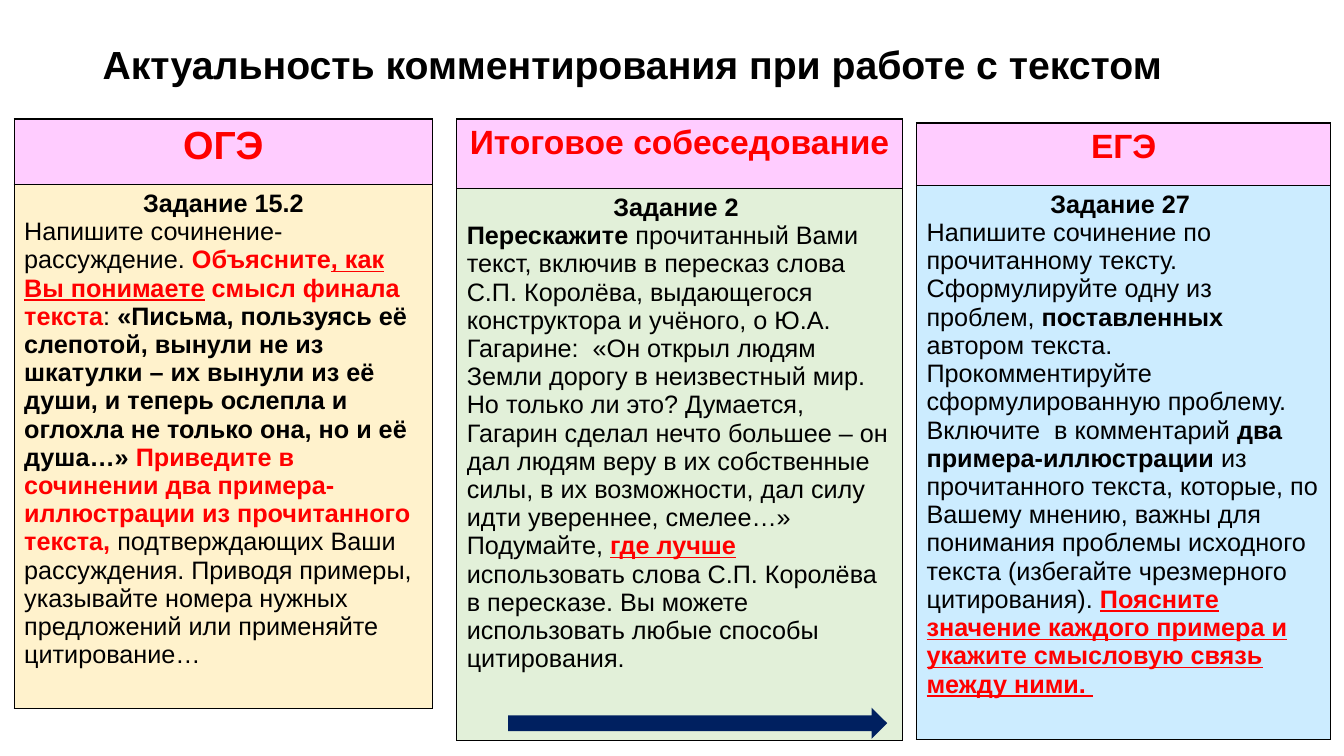
"""Builds a slide comparing the commentary tasks of three exams."""
from dataclasses import dataclass

from lxml import etree
from pptx import Presentation
from pptx.dml.color import RGBColor
from pptx.enum.shapes import MSO_SHAPE
from pptx.enum.text import MSO_ANCHOR, PP_ALIGN
from pptx.oxml.ns import qn
from pptx.util import Emu, Pt

ARROW = MSO_SHAPE.RIGHT_ARROW
CENTER = PP_ALIGN.CENTER
MIDDLE = MSO_ANCHOR.MIDDLE

BLACK = RGBColor(0x00, 0x00, 0x00)
RED = RGBColor(0xFF, 0x00, 0x00)
PINK = RGBColor(0xFF, 0xCC, 0xFF)
CREAM = RGBColor(0xFF, 0xF2, 0xCC)
GREEN = RGBColor(0xE2, 0xF0, 0xD9)
BLUE = RGBColor(0xCC, 0xEC, 0xFF)
NAVY = RGBColor(0x00, 0x20, 0x60)

FACE = "Arial"
BLANK = 6
SIDES = ("a:lnL", "a:lnR", "a:lnT", "a:lnB")


@dataclass(frozen=True)
class Look:
    """Colour and emphasis of a run."""
    color: RGBColor = BLACK
    bold: bool = False
    under: bool = False


PLAIN = Look()
BOLD = Look(bold=True)
ALERT = Look(RED, True)
LINED = Look(RED, True, True)


@dataclass(frozen=True)
class Exam:
    """One column: an exam name above its task."""
    name: str
    size: int
    task: str
    runs: list[tuple[str, Look]]
    fill: RGBColor
    left: int
    top: int
    width: int
    rows: tuple[int, int]


EXAMS = [
    Exam("ОГЭ", 28, "Задание 15.2", [
        ("Напишите сочинение-рассуждение. ", PLAIN),
        ("Объясните", ALERT),
        (", как Вы понимаете", LINED),
        (" смысл финала текста", ALERT),
        (": ", PLAIN),
        ("«Письма, пользуясь её слепотой, вынули не из шкатулки – их вынули "
         "из её души, и теперь ослепла и оглохла не только она, но и её "
         "душа…» ", BOLD),
        ("Приведите в сочинении два примера-иллюстрации из прочитанного "
         "текста, ", ALERT),
        ("подтверждающих Ваши рассуждения. Приводя примеры, указывайте номера "
         "нужных предложений или применяйте цитирование…", PLAIN),
    ], CREAM, 14, 118, 415, (65, 514)),
    Exam("Итоговое собеседование ", 24, "Задание 2 ", [
        ("Перескажите", BOLD),
        (" прочитанный Вами текст, включив в пересказ слова С.П. Королёва, "
         "выдающегося конструктора и учёного, о Ю.А. Гагарине:  «Он открыл "
         "людям Земли дорогу в неизвестный мир. Но только ли это? Думается, "
         "Гагарин сделал нечто большее – он дал людям веру в их собственные "
         "силы, в их возможности, дал силу идти увереннее, смелее…» "
         "Подумайте, ", PLAIN),
        ("где лучше ", LINED),
        ("использовать слова С.П. Королёва в пересказе. Вы можете "
         "использовать любые способы цитирования.", PLAIN),
    ], GREEN, 453, 118, 442, (69, 548)),
    Exam("ЕГЭ", 24, "Задание 27 ", [
        ("Напишите сочинение по прочитанному тексту. Сформулируйте одну из "
         "проблем, ", PLAIN),
        ("поставленных ", BOLD),
        ("автором текста. Прокомментируйте сформулированную проблему. "
         "Включите  в комментарий ", PLAIN),
        ("два примера-иллюстрации", BOLD),
        (" из прочитанного текста, которые, по Вашему мнению, важны для "
         "понимания проблемы исходного текста (избегайте чрезмерного "
         "цитирования). ", PLAIN),
        ("Поясните значение каждого примера и укажите смысловую связь между "
         "ними. ", LINED),
    ], BLUE, 909, 122, 411, (62, 548)),
]


def px(count: int) -> Emu:
    """Turn px, a hundred to the inch, into EMU."""
    return Emu(count * 9144)


def style(font, size: int, look: Look) -> None:
    """Set face, size and look of a paragraph font."""
    font.name = FACE
    font.size = Pt(size)
    font.bold = look.bold
    font.color.rgb = look.color


def paint(cell, fill: RGBColor) -> None:
    """Fill a cell and rule its four sides in black."""
    props = cell._tc.get_or_add_tcPr()
    for side in SIDES:
        line = etree.SubElement(props, qn(side), w=str(Pt(1)))
        solid = etree.SubElement(line, qn("a:solidFill"))
        etree.SubElement(solid, qn("a:srgbClr"), val=str(BLACK))
    cell.fill.solid()
    cell.fill.fore_color.rgb = fill


def head(para, text: str, size: int, look: Look) -> None:
    """Write a centred heading."""
    para.text = text
    para.alignment = CENTER
    style(para.font, size, look)


def draw_exam(slide, exam: Exam) -> None:
    """Draw one exam as a table of two rows."""
    frame = slide.shapes.add_table(2, 1, px(exam.left), px(exam.top),
                                   px(exam.width), px(sum(exam.rows)))
    table = frame.table
    table.first_row = table.horz_banding = False
    for row, high in zip(table.rows, exam.rows):
        row.height = px(high)
    top, body = table.cell(0, 0), table.cell(1, 0)
    paint(top, PINK)
    paint(body, exam.fill)
    head(top.text_frame.paragraphs[0], exam.name, exam.size, ALERT)
    head(body.text_frame.paragraphs[0], exam.task, 18, BOLD)
    para = body.text_frame.add_paragraph()
    style(para.font, 18, PLAIN)
    for text, look in exam.runs:
        run = para.add_run()
        run.text = text
        run.font.bold = look.bold
        run.font.underline = look.under
        run.font.color.rgb = look.color


def draw_title(slide) -> None:
    """Write the slide title."""
    box = slide.shapes.add_textbox(px(92), px(40), px(1150), px(53))
    frame = box.text_frame
    frame.word_wrap = True
    frame.vertical_anchor = MIDDLE
    para = frame.paragraphs[0]
    para.text = "Актуальность комментирования при работе с текстом"
    para.line_spacing = 0.9
    style(para.font, 28, BOLD)


def draw_arrow(slide) -> None:
    """Draw the arrow that leads to the last exam."""
    arrow = slide.shapes.add_shape(ARROW, px(504), px(702), px(376), px(31))
    arrow.shadow.inherit = False
    arrow.fill.solid()
    arrow.fill.fore_color.rgb = NAVY
    arrow.line.fill.background()


def main() -> None:
    """Build and save the slide."""
    deck = Presentation()
    deck.slide_width, deck.slide_height = px(1333), px(750)
    slide = deck.slides.add_slide(deck.slide_layouts[BLANK])
    draw_title(slide)
    for exam in EXAMS:
        draw_exam(slide, exam)
    draw_arrow(slide)
    deck.save("out.pptx")


if __name__ == "__main__":
    main()
